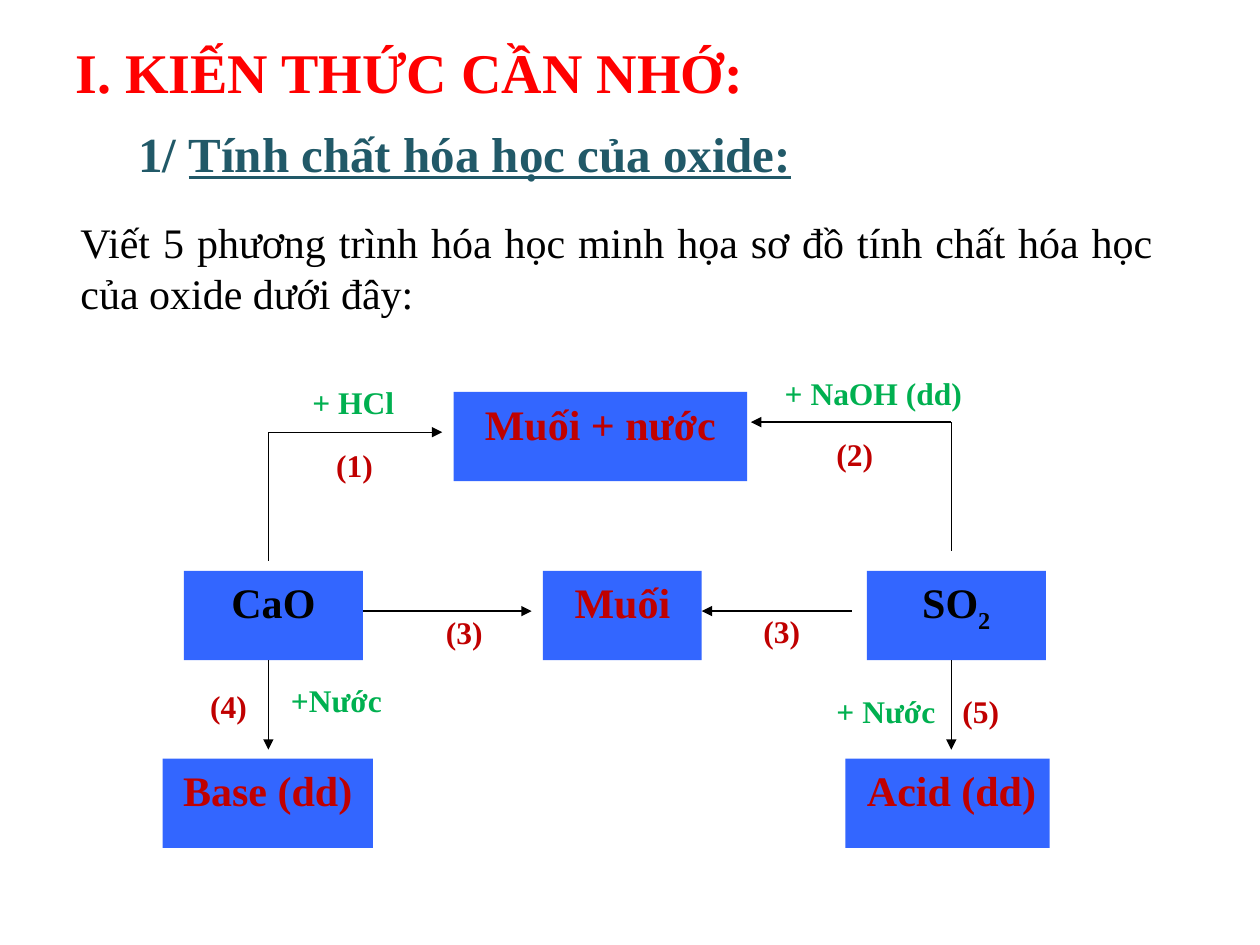
import pptx
import pptx.dml.color
import pptx.enum.shapes
import pptx.enum.text
import pptx.oxml
import pptx.oxml.ns
import pptx.util
from dataclasses import dataclass

# The grid has 100 columns and 75 rows of square cells
COLS, ROWS = 100, 75
CELL = pptx.util.Inches(0.1)
FONT = "Times New Roman"
HUES = {
    "head": "FF0000",
    "sub": "215968",
    "ink": "000000",
    "box": "3366FF",
    "red": "C00000",
    "green": "00B050",
}
ALIGN = pptx.enum.text.PP_ALIGN


@dataclass
class Piece:
    text: str
    line: bool = False
    low: bool = False


@dataclass
class Item:
    col: float
    row: float
    wide: float
    high: float
    words: list[Piece]
    hue: str
    size: int = 24
    bold: bool = True
    align: ALIGN = ALIGN.LEFT


@dataclass
class Arrow:
    col: float
    row: float
    to_col: float
    to_row: float
    head: bool = True


def grid(*cells: float) -> list[int]:
    return [round(cell * CELL) for cell in cells]


def tint(name: str) -> pptx.dml.color.RGBColor:
    return pptx.dml.color.RGBColor.from_string(HUES[name])


def write(frame, item: Item) -> None:
    frame.word_wrap = True
    frame.vertical_anchor = pptx.enum.text.MSO_ANCHOR.TOP
    para = frame.paragraphs[0]
    para.alignment = item.align
    for piece in item.words:
        run = para.add_run()
        run.text = piece.text
        run.font.name = FONT
        run.font.size = pptx.util.Pt(item.size)
        run.font.bold = item.bold
        run.font.color.rgb = tint(item.hue)
        if piece.line:
            run.font.underline = True
        if piece.low:
            run._r.get_or_add_rPr().set("baseline", "-25000")


def draw_text(shapes, item: Item) -> None:
    area = grid(item.col, item.row, item.wide, item.high)
    frame = shapes.add_textbox(*area).text_frame
    write(frame, item)
    frame.auto_size = pptx.enum.text.MSO_AUTO_SIZE.SHAPE_TO_FIT_TEXT


def draw_box(shapes, item: Item) -> None:
    kind = pptx.enum.shapes.MSO_SHAPE.RECTANGLE
    area = grid(item.col, item.row, item.wide, item.high)
    shape = shapes.add_shape(kind, *area)
    shape.shadow.inherit = False
    shape.fill.solid()
    shape.fill.fore_color.rgb = tint("box")
    shape.line.fill.background()
    write(shape.text_frame, item)


def add_tag(node, tag: str) -> None:
    space = pptx.oxml.ns.nsdecls("a")
    node.append(pptx.oxml.parse_xml(f"<a:{tag} {space}/>"))


def draw_arrow(shapes, arrow: Arrow) -> None:
    kind = pptx.enum.shapes.MSO_CONNECTOR.STRAIGHT
    ends = grid(arrow.col, arrow.row, arrow.to_col, arrow.to_row)
    link = shapes.add_connector(kind, *ends)
    link.line.color.rgb = tint("ink")
    link.line.width = pptx.util.Pt(0.75)
    props = link._element.spPr
    if arrow.head:
        stroke = props.get_or_add_ln()
        add_tag(stroke, "tailEnd")
        stroke[-1].set("type", "triangle")
    add_tag(props, "effectLst")


def box(col: float, row: float, wide: float, hue: str, *words: Piece) -> Item:
    return Item(col, row, wide, 7.1, list(words), hue, align=ALIGN.CENTER)


def label(col: float, row: float, wide: float, text: str, hue: str) -> Item:
    return Item(col, row, wide, 4, [Piece(text)], hue, 18)


# Headings and task
HEADS = [
    Item(5, 2.5, 65, 6.4, [Piece("I. KIẾN THỨC CẦN NHỚ:")], "head", 32),
    Item(10, 9.3, 61.7, 5.7,
         [Piece("1/ "), Piece("Tính chất hóa học của oxide:", line=True)],
         "sub", 28),
    Item(5.4, 16.7, 87.1, 9.1,
         [Piece("Viết 5 phương trình hóa học minh họa sơ đồ "
                "tính chất hóa học của oxide dưới đây:")],
         "ink", bold=False, align=ALIGN.JUSTIFY),
]

# Boxes, in three rows
TOP, MID, BASE = 31.1, 45.3, 60.2
BOXES = [
    box(36, TOP, 23.3, "red", Piece("Muối + nước")),
    box(14.6, MID, 14.2, "ink", Piece("CaO")),
    box(43.1, MID, 12.6, "red", Piece("Muối")),
    box(68.8, MID, 14.2, "ink", Piece("SO"), Piece("2", low=True)),
    box(12.9, BASE, 16.7, "red", Piece("Base (dd)")),
    box(67.1, BASE, 16.2, "red", Piece(" Acid (dd)")),
]

# Arrows, around a left and a right stem
LEFT, RIGHT = 21.3, 75.5
ARROWS = [
    Arrow(28.8, 48.5, 42.2, 48.5),
    Arrow(67.6, 48.5, 55.7, 48.5),
    Arrow(LEFT, 34.3, LEFT, 44.5, head=False),
    Arrow(LEFT, 34.3, 35.1, 34.3),
    Arrow(RIGHT, 33.5, RIGHT, 43.7, head=False),
    Arrow(RIGHT, 33.5, 59.6, 33.5),
] + [Arrow(stem, 52.4, stem, 59.5) for stem in (LEFT, RIGHT)]

# Step numbers and reagents
STEPS = [
    label(col, row, 5.5, f"({step})", "red")
    for step, col, row in [
        (1, 25.7, 34.9), (2, 65.4, 34), (3, 34.4, 48.2),
        (3, 59.6, 48.1), (4, 15.7, 54), (5, 75.4, 54.4),
    ]
]
ADDED = [
    label(23.8, 29.9, 10.2, "+ HCl", "green"),
    label(61.3, 29.2, 16.4, "+ NaOH (dd)", "green"),
    label(22.1, 53.6, 10.2, "+Nước", "green"),
    label(65.4, 54.4, 10.2, "+ Nước", "green"),
]


def main() -> None:
    deck = pptx.Presentation()
    deck.slide_width, deck.slide_height = grid(COLS, ROWS)
    shapes = deck.slides.add_slide(deck.slide_layouts[6]).shapes
    for item in HEADS:
        draw_text(shapes, item)
    for item in BOXES:
        draw_box(shapes, item)
    for arrow in ARROWS:
        draw_arrow(shapes, arrow)
    for item in STEPS + ADDED:
        draw_text(shapes, item)
    deck.save("out.pptx")


if __name__ == "__main__":
    main()
